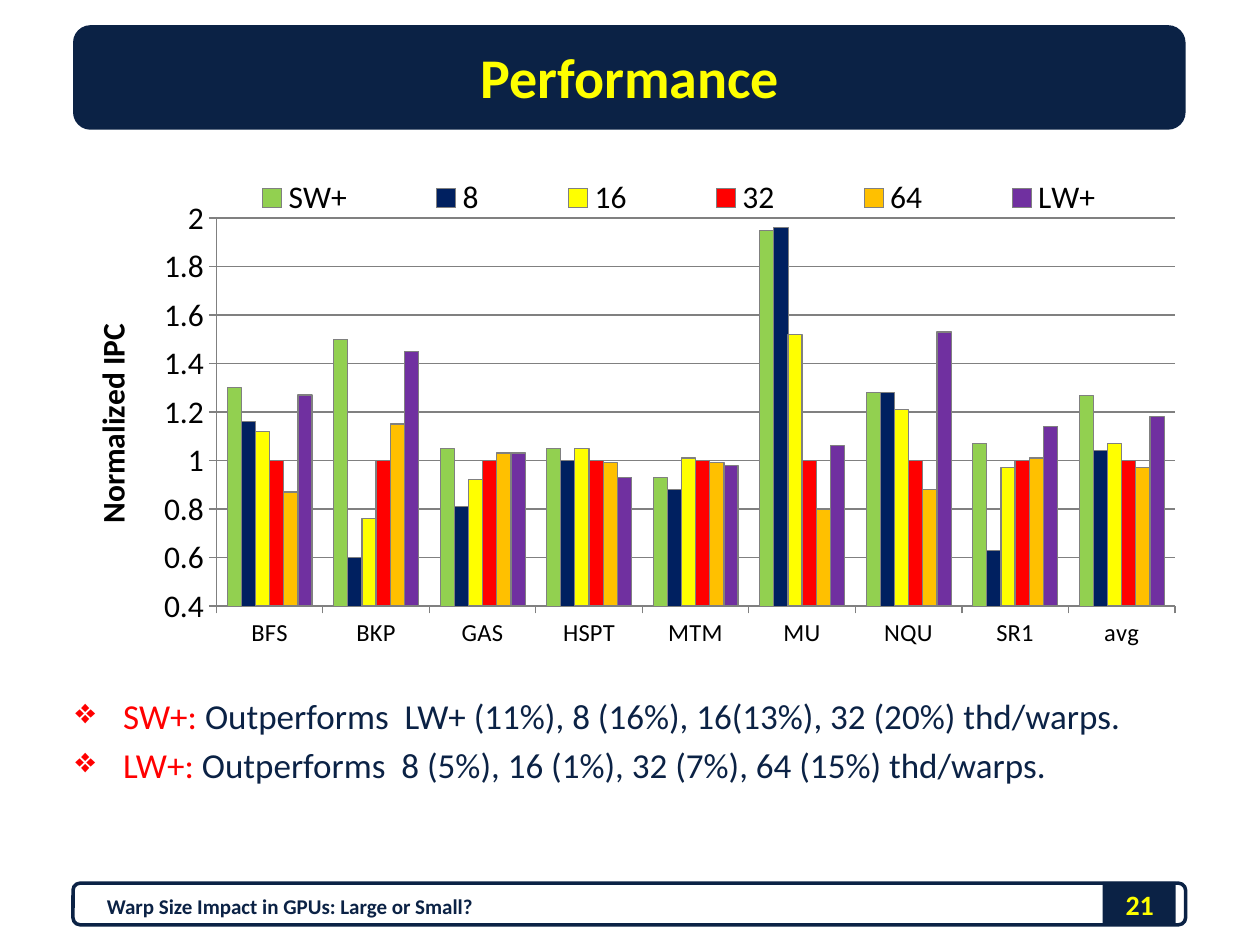
from dataclasses import dataclass

from lxml.etree import SubElement
from pptx import Presentation
from pptx.chart.data import CategoryChartData
from pptx.dml.color import RGBColor
from pptx.enum.chart import XL_CHART_TYPE as ChartType
from pptx.enum.chart import XL_LEGEND_POSITION as LegendPosition
from pptx.enum.chart import XL_TICK_MARK as TickMark
from pptx.enum.shapes import MSO_SHAPE as Preset
from pptx.enum.text import MSO_ANCHOR as Anchor
from pptx.enum.text import PP_ALIGN as Align
from pptx.oxml.ns import qn
from pptx.util import Inches, Pt


@dataclass(frozen=True)
class Theme:
    font: str = "Calibri"
    navy: str = "0B2245"
    yellow: str = "FFFF00"
    red: str = "FF0000"
    black: str = "000000"
    grey: str = "808080"
    title_size: int = 32
    body_size: int = 20
    axis_size: int = 18
    number_size: int = 16
    category_size: int = 14
    footer_size: int = 12


THEME = Theme()

CATEGORIES = ["BFS", "BKP", "GAS", "HSPT", "MTM", "MU", "NQU", "SR1", "avg"]
# Name, fill colour, outline width in points, values
SERIES = [
    ("SW+", "92D050", 0.25, [1.3, 1.5, 1.05, 1.05, 0.93, 1.95, 1.28, 1.07, 1.27]),
    ("8", "002060", 0.25, [1.16, 0.6, 0.81, 1, 0.88, 1.96, 1.28, 0.63, 1.04]),
    ("16", "FFFF00", 0.75, [1.12, 0.76, 0.92, 1.05, 1.01, 1.52, 1.21, 0.97, 1.07]),
    ("32", "FF0000", 0.75, [1] * len(CATEGORIES)),
    ("64", "FFC000", 0.75, [0.87, 1.15, 1.03, 0.99, 0.99, 0.8, 0.88, 1.01, 0.97]),
    ("LW+", "7030A0", 0.75, [1.27, 1.45, 1.03, 0.93, 0.98, 1.06, 1.53, 1.14, 1.18]),
]
FINDINGS = [
    ("SW+:", " Outperforms  LW+ (11%), 8 (16%), 16(13%), 32 (20%) thd/warps."),
    ("LW+:", " Outperforms  8 (5%), 16 (1%), 32 (7%), 64 (15%) thd/warps."),
]


def set_values(target, values):
    for name, value in values.items():
        setattr(target, name, value)


def set_font(font, size, color, bold=False):
    set_values(font, {"name": THEME.font, "size": Pt(size), "bold": bold})
    font.color.rgb = RGBColor.from_string(color)


def set_line(line, color, width):
    line.color.rgb = RGBColor.from_string(color)
    line.width = Pt(width)


def add_panel(slide, preset, box, filled=True):
    """Add a navy panel, or only its outline."""
    shape = slide.shapes.add_shape(preset, *map(Inches, box))
    shape.shadow.inherit = False
    if filled:
        shape.fill.solid()
        shape.fill.fore_color.rgb = RGBColor.from_string(THEME.navy)
        shape.line.fill.background()
    else:
        shape.fill.background()
        set_line(shape.line, THEME.navy, 2)


def add_text_frame(slide, box, anchor):
    frame = slide.shapes.add_textbox(*map(Inches, box)).text_frame
    set_values(frame, {"word_wrap": True, "vertical_anchor": anchor})
    return frame


def add_run(paragraph, text, size, color, bold=False):
    run = paragraph.add_run()
    run.text = text
    set_font(run.font, size, color, bold)


def add_label(slide, box, text, size, color, align):
    paragraph = add_text_frame(slide, box, Anchor.MIDDLE).paragraphs[0]
    paragraph.alignment = align
    add_run(paragraph, text, size, color, bold=True)


def add_findings(slide, box):
    frame = add_text_frame(slide, box, Anchor.TOP)
    for index, (lead, detail) in enumerate(FINDINGS):
        paragraph = frame.add_paragraph() if index else frame.paragraphs[0]
        properties = paragraph._p.get_or_add_pPr()
        properties.set("marL", str(Inches(0.38)))
        properties.set("indent", str(-Inches(0.38)))
        SubElement(properties, qn("a:buChar")).set("char", "❖")
        if index:
            paragraph.space_before = Pt(0.2 * THEME.body_size)
        add_run(paragraph, lead, THEME.body_size, THEME.red)
        add_run(paragraph, detail, THEME.body_size, THEME.navy)


def set_layout(element, x, y, width, height, inner=False):
    """Place a chart part by fractions of the chart's size."""
    for old in element.findall(qn("c:layout")):
        element.remove(old)
    layout = SubElement(element, qn("c:layout"))
    manual = SubElement(layout, qn("c:manualLayout"))
    values = {"layoutTarget": "inner"} if inner else {}
    values |= {"xMode": "edge", "yMode": "edge", "x": x, "y": y, "w": width, "h": height}
    for tag, value in values.items():
        SubElement(manual, qn(f"c:{tag}")).set("val", str(value))
    # The schema wants the layout first in a plot area, second in a legend
    element.insert(0 if inner else 1, layout)


def style_axes(chart):
    value_axis, category_axis = chart.value_axis, chart.category_axis
    set_values(value_axis, {
        "minimum_scale": 0.4,
        "maximum_scale": 2,
        "major_unit": 0.2,
        "has_major_gridlines": True,
    })
    set_line(value_axis.major_gridlines.format.line, THEME.grey, 0.75)
    for axis, size in ((value_axis, THEME.axis_size), (category_axis, THEME.category_size)):
        axis.major_tick_mark = TickMark.OUTSIDE
        set_line(axis.format.line, THEME.grey, 0.75)
        set_font(axis.tick_labels.font, size, THEME.black)
    paragraph = value_axis.axis_title.text_frame.paragraphs[0]
    add_run(paragraph, "Normalized IPC", THEME.axis_size, THEME.black, bold=True)


def add_performance_chart(slide, box):
    data = CategoryChartData()
    data.categories = CATEGORIES
    for name, _, _, values in SERIES:
        data.add_series(name, values)
    chart = slide.shapes.add_chart(
        ChartType.COLUMN_CLUSTERED, *map(Inches, box), data).chart
    set_values(chart, {"has_title": False, "has_legend": True})
    set_font(chart.font, THEME.category_size, THEME.black)
    set_values(chart.plots[0], {"gap_width": 150, "overlap": 0, "vary_by_categories": False})
    for series, (_, color, width, _) in zip(chart.plots[0].series, SERIES):
        series.format.fill.solid()
        series.format.fill.fore_color.rgb = RGBColor.from_string(color)
        set_line(series.format.line, THEME.grey, width)
    style_axes(chart)
    set_values(chart.legend, {"position": LegendPosition.TOP, "include_in_layout": True})
    set_font(chart.legend.font, THEME.axis_size, THEME.black)
    set_layout(chart.legend._element, 0.1, 0.02, 0.9, 0.08)
    plot_area = chart._chartSpace.chart.plotArea
    set_layout(plot_area, 0.13, 0.1, 0.87, 0.77, inner=True)


def main():
    presentation = Presentation()
    set_values(presentation, {"slide_width": Inches(10), "slide_height": Inches(7.5)})
    slide = presentation.slides.add_slide(presentation.slide_layouts[6])

    add_panel(slide, Preset.RECTANGLE, (8.75, 7, 0.58, 0.33))
    add_panel(slide, Preset.ROUNDED_RECTANGLE, (0.58, 7.01, 8.83, 0.33), filled=False)
    add_panel(slide, Preset.ROUNDED_RECTANGLE, (0.58, 0.2, 8.83, 0.83))
    add_label(slide, (0.5, 0.17, 9, 0.87), "Performance",
              THEME.title_size, THEME.yellow, Align.CENTER)
    add_findings(slide, (0.5, 5.46, 9, 1.24))
    add_label(slide, (8.67, 6.98, 0.75, 0.4), "21",
              THEME.number_size, THEME.yellow, Align.CENTER)
    add_label(slide, (0.75, 6.99, 5.58, 0.4), "Warp Size Impact in GPUs: Large or Small?",
              THEME.footer_size, THEME.navy, Align.LEFT)
    add_performance_chart(slide, (0.58, 1.33, 8.75, 4))
    presentation.save("out.pptx")


if __name__ == "__main__":
    main()
